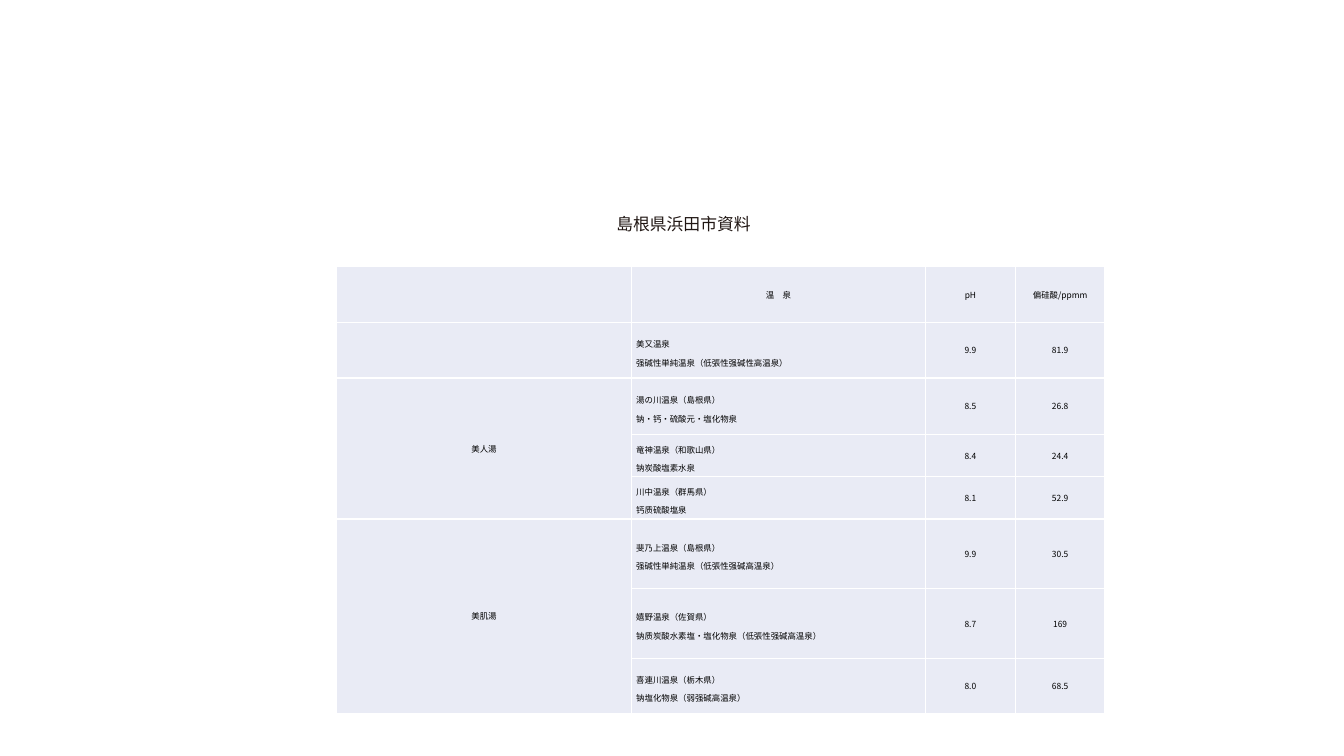
from lxml.etree import SubElement
from pptx import Presentation
from pptx.dml.color import RGBColor
from pptx.enum.text import MSO_AUTO_SIZE as AutoSize, MSO_ANCHOR as Anchor, PP_ALIGN as Align
from pptx.oxml.ns import qn
from pptx.util import Inches, Pt

TITLE = "島根県浜田市資料"
HEADERS = ("", "温\u3000泉".replace("\u3000", "　"), "pH", "偏硅酸/ppmm")
GROUPS = [
    ("", [
        ("美又温泉", "强碱性単純温泉（低張性强碱性高温泉）", "9.9", "81.9"),
    ]),
    ("美人湯", [
        ("湯の川温泉（島根県）", "钠・钙・硫酸元・塩化物泉", "8.5", "26.8"),
        ("竜神温泉（和歌山県）", "钠炭酸塩素水泉", "8.4", "24.4"),
        ("川中温泉（群馬県）", "钙质硫酸塩泉", "8.1", "52.9"),
    ]),
    ("美肌湯", [
        ("斐乃上温泉（島根県）", "强碱性単純温泉（低張性强碱高温泉）", "9.9", "30.5"),
        ("嬉野温泉（佐賀県）", "钠质炭酸水素塩・塩化物泉（低張性强碱高温泉）", "8.7", "169"),
        ("喜連川温泉（栃木県）", "钠塩化物泉（弱强碱高温泉）", "8.0", "68.5"),
    ]),
]
COLUMN_WIDTHS = (2.92, 2.92, 0.89, 0.89)
ROW_HEIGHTS = (0.56, 0.55, 0.56, 0.42, 0.42, 0.69, 0.69, 0.55)
TABLE_LEFT, TABLE_TOP = 3.34, 2.64
CELL_FILL, BORDER = "E9EBF5", "FFFFFF"


def color(value):
    return RGBColor.from_string(value)


def write_text(frame, text, size=6, font="Noto Sans CJK JP", ink="000000",
               align=Align.CENTER, spacing=None):
    frame.text = text
    for paragraph in frame.paragraphs:
        paragraph.alignment = align
        if spacing:
            paragraph.line_spacing = spacing
        for run in paragraph.runs:
            run.font.size = Pt(size)
            run.font.name = font
            run.font.color.rgb = color(ink)
            SubElement(run.font._element, qn("a:ea"), typeface=font)


def format_cell(cell):
    properties = cell._tc.get_or_add_tcPr()
    for side in ("lnL", "lnR", "lnT", "lnB"):
        line = SubElement(properties, qn(f"a:{side}"), w=str(Pt(1)))
        SubElement(SubElement(line, qn("a:solidFill")), qn("a:srgbClr"), val=BORDER)
    cell.fill.solid()
    cell.fill.fore_color.rgb = color(CELL_FILL)
    cell.vertical_anchor = Anchor.MIDDLE
    cell.margin_left = cell.margin_right = Inches(0.05)
    cell.margin_top = cell.margin_bottom = Inches(0.02)


def add_title(slide):
    title = slide.shapes.title
    title.left, title.top = Inches(3.78), Inches(2.07)
    title.width, title.height = Inches(6), Inches(0.31)
    frame = title.text_frame
    frame.auto_size = AutoSize.NONE
    frame.vertical_anchor = Anchor.MIDDLE
    write_text(frame, TITLE, size=12, font="Noto Sans CJK SC", ink="201613", spacing=1.0)


def add_springs_table(slide):
    table = slide.shapes.add_table(
        len(ROW_HEIGHTS), len(COLUMN_WIDTHS), Inches(TABLE_LEFT), Inches(TABLE_TOP),
        Inches(sum(COLUMN_WIDTHS)), Inches(sum(ROW_HEIGHTS))).table
    table.first_row = table.horz_banding = False
    for column, width in zip(table.columns, COLUMN_WIDTHS):
        column.width = Inches(width)
    for row, height in zip(table.rows, ROW_HEIGHTS):
        row.height = Inches(height)
    for cell in table.iter_cells():
        format_cell(cell)

    for column_index, header in enumerate(HEADERS):
        write_text(table.cell(0, column_index).text_frame, header)
    row_index = 1
    for group, springs in GROUPS:
        group_cell = table.cell(row_index, 0)
        if len(springs) > 1:
            group_cell.merge(table.cell(row_index + len(springs) - 1, 0))
        write_text(group_cell.text_frame, group)
        for name, quality, acidity, silicate in springs:
            write_text(table.cell(row_index, 1).text_frame, f"{name}\n{quality}",
                       align=Align.LEFT, spacing=1.5)
            write_text(table.cell(row_index, 2).text_frame, acidity)
            write_text(table.cell(row_index, 3).text_frame, silicate)
            row_index += 1


def main():
    presentation = Presentation()
    presentation.slide_width = Inches(13.33)
    presentation.slide_height = Inches(7.5)
    slide = presentation.slides.add_slide(presentation.slide_layouts[5])
    add_springs_table(slide)
    add_title(slide)
    presentation.save("out.pptx")


if __name__ == "__main__":
    main()
